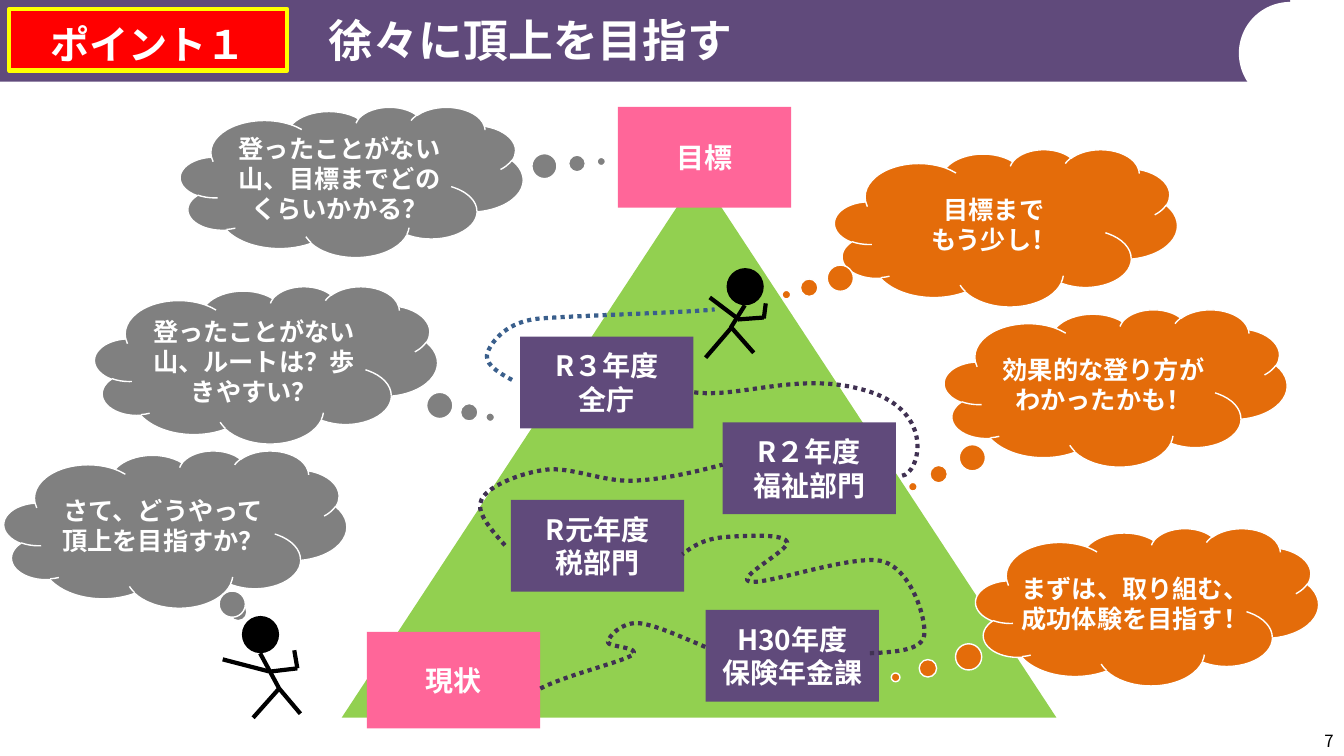
import pptx
import pptx.dml.color
import pptx.enum.dml
import pptx.enum.shapes
import pptx.enum.text
import pptx.oxml.ns
import pptx.util
from lxml import etree

Pt = pptx.util.Pt
Preset = pptx.enum.shapes.MSO_SHAPE
Align = pptx.enum.text.PP_ALIGN
qn = pptx.oxml.ns.qn

FONT = "Noto Sans CJK JP"
WHITE, BLACK, YELLOW, RED = "FFFFFF", "000000", "FFFF00", "FF0000"
PURPLE, DARK_PURPLE, BLUE = "604A7B", "403152", "3A5F8C"
PINK, GREEN, GRAY, ORANGE = "FF6699", "92D050", "808080", "E46C0A"

MILESTONE_SIZE = (123.8, 65.5)
MILESTONES = [
    (504, 435.6, ["H30年度", "保険年金課"]),
    (365, 357.1, ["R元年度", "税部門"]),
    (516.2, 301.7, ["R２年度", "福祉部門"]),
    (371.5, 240.5, ["R３年度", "全庁"]),
]

# Each route is a start point followed by groups of three Bézier points.
ROUTES = [
    (DARK_PURPLE, [(386, 491.8),
                   (403.9, 482.4), (443.5, 473), (451.4, 468),
                   (459.4, 462.2), (433.4, 462.2), (434.2, 458.6),
                   (434.9, 454.3), (443.5, 445), (455, 445),
                   (466.6, 445.7), (485.3, 454.3), (504, 462.2)]),
    (DARK_PURPLE, [(621.4, 466.6),
                   (640.1, 465.8), (658.8, 464.4), (660.2, 453.6),
                   (661.7, 442.8), (651.6, 407.5), (630.7, 401),
                   (609.8, 395.3), (546.5, 418.3), (535.7, 415.4),
                   (524.2, 413.3), (563.8, 393.1), (562.3, 387.4),
                   (560.9, 382.3), (543.6, 382.3), (528.5, 383),
                   (513.4, 383.8), (502.6, 383.8), (487.4, 396)]),
    (DARK_PURPLE, [(360.7, 389.5),
                   (349.9, 377.3), (339.1, 365), (344.2, 356.4),
                   (349.2, 347), (372.2, 337.7), (390.2, 335.5),
                   (408.2, 333.4), (430.6, 344.2), (451.4, 343.4),
                   (472.3, 342.7), (494.6, 337.7), (516.2, 331.9)]),
    (DARK_PURPLE, [(644.4, 339.8),
                   (656.6, 338.4), (668.9, 294.5), (619.9, 279.4),
                   (571.7, 264.2), (528.5, 285.1), (494.6, 280.1)]),
    (BLUE, [(365.8, 271.4),
            (355, 265.7), (344.9, 259.2), (348.5, 251.3),
            (351.4, 244.1), (362.2, 229), (386.6, 227.5),
            (411.8, 225.4), (494.6, 223.2), (510.5, 221)]),
]

CLOUD_WIDTH = 244.8
# left, top, height, tail position, fill, lines
CLOUDS = [
    (2.9, 321.8, 112.3, (0.185, 0.532), GRAY, ["さて、どうやって頂上を目指すか？"]),
    (67.7, 204.5, 112.3, (0.654, 0.333), GRAY, ["登ったことがない山、ルートは？歩きやすい？"]),
    (128.9, 76.3, 107.3, (0.728, -0.136), GRAY, ["登ったことがない山、目標までどのくらいかかる？"]),
    (697, 377.3, 112.3, (-0.734, 0.449), ORANGE, ["まずは、取り組む、", "成功体験を目指す！"]),
    (674.6, 221, 112.3, (-0.592, 0.628), ORANGE, ["効果的な登り方がわかったかも！"]),
    (596.2, 106.6, 112.3, (-0.641, 0.425), ORANGE, ["目標まで", "もう少し！"]),
]

# Limbs are (from, to), measured from the top left of the head.
STARTING_LIMBS = [
    ((13, 26.6), (26.6, 51.8)), ((26.6, 51.8), (8, 72.7)),
    ((26.6, 51.8), (41.8, 69.8)), ((21, 39.6), (39.6, 37.4)),
    ((-13.7, 31), (19.4, 39.6)), ((39.6, 37.4), (37.4, 24.5)),
]
CLIMBING_LIMBS = [
    ((13, 26.6), (3, 42.5)), ((3.5, 42.5), (-15, 64)),
    ((3.5, 42.5), (19.4, 60.5)), ((8, 36.7), (26.6, 35.3)),
    ((26.6, 36), (28, 25.2)), ((-12, 21), (7, 35.3)),
]


def color(hex_value):
    return pptx.dml.color.RGBColor.from_string(hex_value)


def set_line(line, hex_value, width):
    line.color.rgb = color(hex_value)
    line.width = Pt(width)


def add_preset(shapes, preset, box, fill, outline=None, outline_width=1):
    shape = shapes.add_shape(preset, *map(Pt, box))
    shape.shadow.inherit = False
    shape.fill.solid()
    shape.fill.fore_color.rgb = color(fill)
    if outline:
        set_line(shape.line, outline, outline_width)
    else:
        shape.line.fill.background()
    return shape


def write_text(shape, lines, size, hex_value=WHITE, bold=True, align=Align.CENTER, insets=None, wrap=True):
    """Write one paragraph per line; insets are left, top, right, bottom."""
    frame = shape.text_frame
    frame.word_wrap = wrap
    frame.auto_size = pptx.enum.text.MSO_AUTO_SIZE.NONE
    frame.vertical_anchor = pptx.enum.text.MSO_ANCHOR.MIDDLE
    if insets:
        (frame.margin_left, frame.margin_top,
         frame.margin_right, frame.margin_bottom) = map(Pt, insets)
    for index, line in enumerate(lines):
        paragraph = frame.add_paragraph() if index else frame.paragraphs[0]
        paragraph.alignment = align
        run = paragraph.add_run()
        run.text = line
        run.font.size = Pt(size)
        run.font.bold = bold
        run.font.color.rgb = color(hex_value)
        run.font.name = FONT
        east_asian = etree.SubElement(run.font._element, qn("a:ea"))
        east_asian.set("typeface", FONT)


def add_header(slide, left, top, width, height):
    add_preset(slide.shapes, Preset.RECTANGLE, (left, top, width, height), PURPLE)
    add_preset(slide.shapes, Preset.OVAL, (left + width - 36.7, top + 1.4, 73.4, 73.4), WHITE)
    title = slide.shapes.title
    title.left, title.top, title.width, title.height = map(Pt, (left, top, width, height - 1.4))
    write_text(title, ["徐々に頂上を目指す"], 32, align=Align.LEFT, insets=(235, 2.9, 2.9, 2.9))
    title.element.getparent().append(title.element)
    badge = add_preset(slide.shapes, Preset.RECTANGLE,
                       (left + 6.5, top + 6.5, 198.7, 43.9), RED, YELLOW, 3)
    write_text(badge, ["ポイント１"], 28, insets=(0, 0, 0, 0), wrap=False)
    badge.text_frame.paragraphs[0].line_spacing = Pt(40)


def add_climber(slide, left, top, limbs):
    group = slide.shapes.add_group_shape()
    add_preset(group.shapes, Preset.OVAL, (left, top, 26.6, 26.6), BLACK)
    for (from_x, from_y), (to_x, to_y) in limbs:
        limb = group.shapes.add_connector(
            pptx.enum.shapes.MSO_CONNECTOR.STRAIGHT,
            Pt(left + from_x), Pt(top + from_y), Pt(left + to_x), Pt(top + to_y))
        set_line(limb.line, BLACK, 3)
        etree.SubElement(limb._element.spPr, qn("a:effectLst"))


def add_route(slide, hex_value, points):
    """Draw a dotted path, turning each three straight segments into one curve."""
    start, *others = [(Pt(x), Pt(y)) for x, y in points]
    builder = slide.shapes.build_freeform(*start)
    builder.add_line_segments(others, close=False)
    route = builder.convert_to_shape()
    route.shadow.inherit = False
    route.fill.background()
    set_line(route.line, hex_value, 3)
    route.line.dash_style = pptx.enum.dml.MSO_LINE.ROUND_DOT
    path = route._element.find(".//" + qn("a:path"))
    segments = path.findall(qn("a:lnTo"))
    for index in range(0, len(segments), 3):
        curve = etree.SubElement(path, qn("a:cubicBezTo"))
        for segment in segments[index:index + 3]:
            curve.append(segment[0])
            path.remove(segment)


def add_mountain(slide, left, top, width, height):
    add_preset(slide.shapes, Preset.ISOSCELES_TRIANGLE, (left, top, width, height), GREEN)
    box_width, box_height = MILESTONE_SIZE
    stages = [
        ((left + 18, top + 327.5, box_width, 69.1), PINK, ["現状"]),
        ((left + 197.3, top - 47.5, box_width, 72), PINK, ["目標"]),
    ]
    stages += [((x, y, box_width, box_height), PURPLE, lines) for x, y, lines in MILESTONES]
    for box, fill, lines in stages:
        write_text(add_preset(slide.shapes, Preset.RECTANGLE, box, fill), lines, 20)
    for hex_value, points in ROUTES:
        add_route(slide, hex_value, points)


def add_thought(slide, box, tail, fill, lines):
    cloud = add_preset(slide.shapes, Preset.CLOUD_CALLOUT, box, fill, WHITE)
    cloud.adjustments[0], cloud.adjustments[1] = tail
    several = len(lines) > 1
    write_text(cloud, lines, 18, insets=(0, 2.9, 0, 2.9) if several else None, wrap=not several)


def add_page_number(slide, left, top, width, height):
    box = slide.shapes.add_textbox(*map(Pt, (left, top, width, height)))
    write_text(box, ["7"], 12, BLACK, bold=False, align=Align.RIGHT)


def main():
    presentation = pptx.Presentation()
    presentation.slide_width, presentation.slide_height = Pt(960), Pt(540)
    slide = presentation.slides.add_slide(presentation.slide_layouts[5])
    add_mountain(slide, 244.1, 123.8, 510.5, 388.8)
    add_climber(slide, 172.8, 440, STARTING_LIMBS)
    for left, top, height, tail, fill, lines in CLOUDS:
        add_thought(slide, (left, top, CLOUD_WIDTH, height), tail, fill, lines)
    add_climber(slide, 519, 191.5, CLIMBING_LIMBS)
    add_header(slide, 0, 0, 921.6, 58.3)
    add_page_number(slide, 897.8, 518.4, 62, 21.6)
    presentation.save("out.pptx")


if __name__ == "__main__":
    main()
